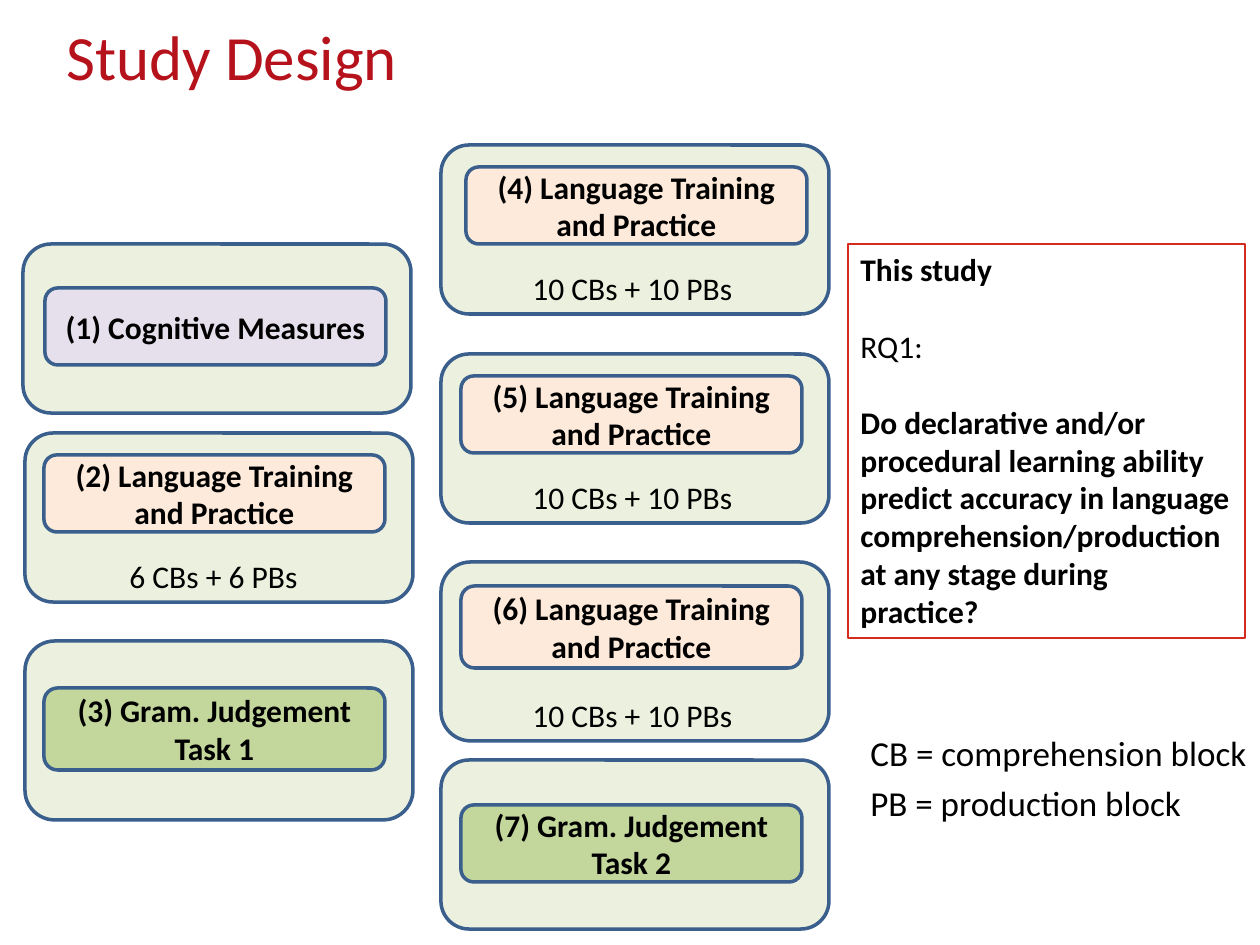
from pptx import Presentation
from pptx.dml.color import RGBColor
from pptx.enum.shapes import MSO_SHAPE
from pptx.enum.text import MSO_ANCHOR, PP_ALIGN
from pptx.util import Emu, Pt

PX_PER_INCH = 126
RED = RGBColor(0xB5, 0x12, 0x1B)
BORDER_RED = RGBColor(0xD5, 0x2B, 0x1E)
BLUE = RGBColor(0x3A, 0x5F, 0x8C)
BLACK = RGBColor(0, 0, 0)
PALE_GREEN = RGBColor(0xEB, 0xF1, 0xDE)
GREEN = RGBColor(0xC3, 0xD6, 0x9B)
LILAC = RGBColor(0xE6, 0xE0, 0xEC)
PEACH = RGBColor(0xFD, 0xEA, 0xDA)

CARD_W, STEP_W = 388, 341
LEFT_X, RIGHT_X = 25, 441
TRAINING = "Language Training and Practice"
BLOCKS = "10 CBs + 10 PBs"

# text, step fill, card (x, y, height), step (dx, dy, height), block count
CARDS = [
    ("Cognitive Measures", LILAC, (23, 244, 169), (22, 44, 77), None),
    (TRAINING, PEACH, (LEFT_X, 433, 169), (19, 22, 77), "6 CBs + 6 PBs"),
    ("Gram. Judgement Task 1", GREEN, (LEFT_X, 641, 179), (19, 47, 82), None),
    (TRAINING, PEACH, (RIGHT_X, 145, 169), (25, 22, 77), BLOCKS),
    (TRAINING, PEACH, (RIGHT_X, 354, 169), (20, 22, 77), BLOCKS),
    (TRAINING, PEACH, (RIGHT_X, 562, 179), (20, 24, 82), BLOCKS),
    ("Gram. Judgement Task 2", GREEN, (RIGHT_X, 760, 169), (20, 45, 77), None),
]


def px(n):
    return Emu(round(n * 914400 / PX_PER_INCH))


class Deck:
    font = "Calibri"

    def __init__(self, width, height):
        self.prs = Presentation()
        self.prs.slide_width, self.prs.slide_height = px(width), px(height)
        self.s = self.prs.slides.add_slide(self.prs.slide_layouts[6])

    def style(self, p, size, color=BLACK, bold=False):
        f = p.font
        f.name, f.size, f.bold = self.font, Pt(size), bold
        f.color.rgb = color

    def text(self, parent, box, text, size, color=BLACK, wrap=False):
        sp = parent.shapes.add_textbox(*map(px, box))
        tf = sp.text_frame
        tf.word_wrap = wrap
        p = tf.paragraphs[0]
        p.text = text
        self.style(p, size, color)
        return p

    def box(self, parent, kind, box, fill, line, weight):
        sp = parent.shapes.add_shape(kind, *map(px, box))
        sp.shadow.inherit = False
        if fill is None:
            sp.fill.background()
        else:
            sp.fill.solid()
            sp.fill.fore_color.rgb = fill
        sp.line.color.rgb = line
        sp.line.width = Pt(weight)
        return sp

    def card(self, text, fill, card, step, blocks):
        """Pale card holding a numbered step and, if given, its block count."""
        x, y, h = card
        dx, dy, step_h = step
        group = self.s.shapes.add_group_shape()
        kind = MSO_SHAPE.ROUNDED_RECTANGLE
        self.box(group, kind, (x, y, CARD_W, h), PALE_GREEN, BLUE, 2)
        sp = self.box(group, kind, (x + dx, y + dy, STEP_W, step_h), fill, BLUE, 2)
        tf = sp.text_frame
        tf.word_wrap = True
        tf.vertical_anchor = MSO_ANCHOR.MIDDLE
        p = tf.paragraphs[0]
        p.text = text
        p.alignment = PP_ALIGN.CENTER
        self.style(p, 18, bold=True)
        if blocks:
            label_x, label_w = (520, 227) if blocks == BLOCKS else (117, 195)
            self.text(group, (label_x, y + h - 51, label_w, 38), blocks, 18)

    def question(self, box, paragraphs):
        sp = self.box(self.s, MSO_SHAPE.RECTANGLE, box, None, BORDER_RED, 0.75)
        tf = sp.text_frame
        tf.word_wrap = True
        tf.vertical_anchor = MSO_ANCHOR.TOP
        for i, (text, bold) in enumerate(paragraphs):
            p = tf.add_paragraph() if i else tf.paragraphs[0]
            p.text = text
            p.alignment = PP_ALIGN.LEFT
            if i:
                p.space_before = Pt(22)
            self.style(p, 18, bold=bold)


def main():
    deck = Deck(1260, 945)
    title = deck.text(deck.s, (54, 26, 932, 159), "Study Design", 36, RED, wrap=True)
    title.line_spacing = Pt(35)
    for number, (text, *rest) in enumerate(CARDS, 1):
        deck.card(f"({number}) {text}", *rest)
    deck.question((848, 244, 397, 394), [
        ("This study", True),
        ("RQ1:", False),
        ("Do declarative and/or procedural learning ability predict accuracy in "
         "language comprehension/production at any stage during practice?", True),
    ])
    deck.text(deck.s, (858, 725, 406, 55), "CB = comprehension block", 20)
    deck.text(deck.s, (858, 775, 340, 55), "PB = production block", 20)
    deck.prs.save("out.pptx")


if __name__ == "__main__":
    main()
